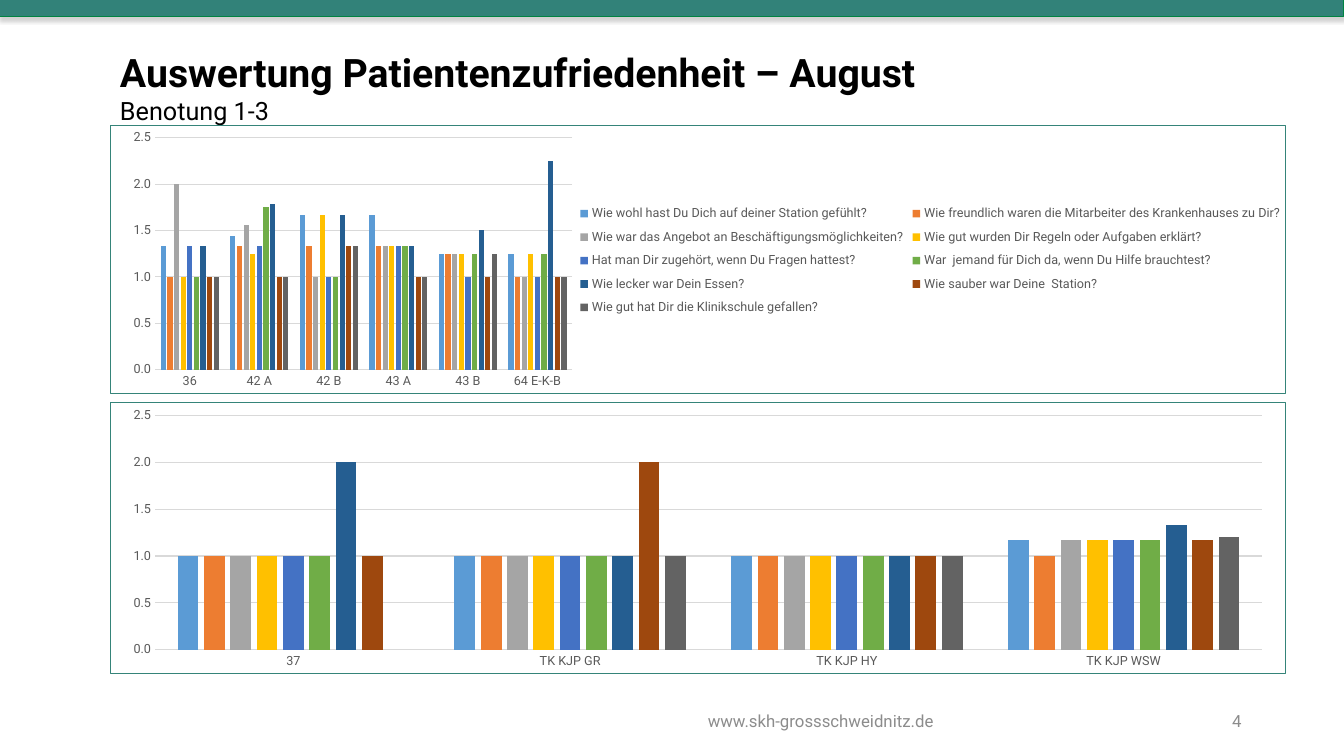
from lxml import etree
from pptx import Presentation
from pptx.chart.data import CategoryChartData
from pptx.dml.color import RGBColor
from pptx.enum.chart import XL_CHART_TYPE, XL_LEGEND_POSITION, XL_TICK_MARK
from pptx.enum.shapes import MSO_SHAPE
from pptx.enum.text import MSO_ANCHOR, MSO_AUTO_SIZE, PP_ALIGN
from pptx.oxml import parse_xml
from pptx.oxml.ns import nsdecls, qn
from pptx.util import Cm, Pt

COLUMNS = XL_CHART_TYPE.COLUMN_CLUSTERED
LEGEND_RIGHT = XL_LEGEND_POSITION.RIGHT
NO_TICK = XL_TICK_MARK.NONE
RECTANGLE = MSO_SHAPE.RECTANGLE
TOP, MIDDLE = MSO_ANCHOR.TOP, MSO_ANCHOR.MIDDLE
FIXED_SIZE = MSO_AUTO_SIZE.NONE
LEFT, CENTER, RIGHT = PP_ALIGN.LEFT, PP_ALIGN.CENTER, PP_ALIGN.RIGHT

FONT = "Roboto"
COLORS = {
    "bar": "328279", "bar_line": "008442", "shadow": "808080",
    "title": "000000", "footer": "8C8C8C", "label": "595959",
    "grid": "D9D9D9", "border": "358479",
}
SERIES_COLORS = ["5B9BD5", "ED7D31", "A5A5A5", "FFC000", "4472C4",
                 "70AD47", "255E91", "9E480E", "636363"]

STATIONS = ["36", "42 A", "42 B", "43 A", "43 B", "64 E-K-B"]
STATION_GRADES = {
    "Wie wohl hast Du Dich auf deiner Station gefühlt?": [1.33, 1.44, 1.67, 1.67, 1.25, 1.25],
    "Wie freundlich waren die Mitarbeiter des Krankenhauses zu Dir?": [1, 1.33, 1.33, 1.33, 1.25, 1],
    "Wie war das Angebot an Beschäftigungsmöglichkeiten?": [2, 1.56, 1, 1.33, 1.25, 1],
    "Wie gut wurden Dir Regeln oder Aufgaben erklärt?": [1, 1.25, 1.67, 1.33, 1.25, 1.25],
    "Hat man Dir zugehört, wenn Du Fragen hattest?": [1.33, 1.33, 1, 1.33, 1, 1],
    "War  jemand für Dich da, wenn Du Hilfe brauchtest?": [1, 1.75, 1, 1.33, 1.25, 1.25],
    "Wie lecker war Dein Essen?": [1.33, 1.78, 1.67, 1.33, 1.5, 2.25],
    "Wie sauber war Deine  Station?": [1, 1, 1.33, 1, 1, 1],
    "Wie gut hat Dir die Klinikschule gefallen?": [1, 1, 1.33, 1, 1.25, 1],
}
CLINICS = ["37", "TK KJP GR", "TK KJP HY", "TK KJP WSW"]
CLINIC_ROWS = [
    [1, 1, 1, 1.17], [1, 1, 1, 1], [1, 1, 1, 1.17],
    [1, 1, 1, 1.17], [1, 1, 1, 1.17], [1, 1, 1, 1.17],
    [2, 1, 1, 1.33], [1, 2, 1, 1.17], [None, 1, 1, 1.2],
]
CLINIC_GRADES = {f"Series {number}": row for number, row in enumerate(CLINIC_ROWS, 1)}


def color(name):
    return RGBColor.from_string(COLORS[name])


def style_font(font, size, name, bold=False):
    font.name = FONT
    font.size = Pt(size)
    font.bold = bold
    font.color.rgb = color(name)


def add_top_bar(page, box):
    bar = page.shapes.add_shape(RECTANGLE, *map(Cm, box))
    bar.fill.solid()
    bar.fill.fore_color.rgb = color("bar")
    bar.line.color.rgb = color("bar_line")
    bar.line.width = Pt(0.75)
    bar.shadow.inherit = False
    effects = bar._element.spPr.find(qn("a:effectLst"))
    effects.append(parse_xml(
        f'<a:outerShdw {nsdecls("a")} blurRad="40000" dist="23000" dir="5400000" rotWithShape="0">'
        f'<a:srgbClr val="{COLORS["shadow"]}"><a:alpha val="35000"/></a:srgbClr></a:outerShdw>'))


def add_title(page, box):
    title = page.shapes.title
    title.left, title.top, title.width, title.height = map(Cm, box)
    frame = title.text_frame
    frame.text = "Auswertung Patientenzufriedenheit – August\nBenotung 1-3"
    frame.word_wrap = True
    frame.auto_size = FIXED_SIZE
    frame.vertical_anchor = TOP
    for para, size, bold in zip(frame.paragraphs, (28, 18), (True, False)):
        para.alignment = LEFT
        style_font(para.font, size, "title", bold)


def add_footer_text(page, box, text, alignment):
    frame = page.shapes.add_textbox(*map(Cm, box)).text_frame
    frame.word_wrap = True
    frame.vertical_anchor = MIDDLE
    para = frame.paragraphs[0]
    para.text = text
    para.alignment = alignment
    style_font(para.font, 12, "footer")


def make_layout(area, inner=False):
    layout = etree.Element(qn("c:layout"))
    manual = etree.SubElement(layout, qn("c:manualLayout"))
    settings = [("layoutTarget", "inner")] if inner else []
    settings += [("xMode", "edge"), ("yMode", "edge")]
    settings += zip("xywh", area)
    for tag, value in settings:
        etree.SubElement(manual, qn(f"c:{tag}")).set("val", str(value))
    return layout


def drop_layout(parent):
    for layout in parent.findall(qn("c:layout")):
        parent.remove(layout)


def style_axes(chart):
    values, categories = chart.value_axis, chart.category_axis
    for axis in (values, categories):
        axis.major_tick_mark = axis.minor_tick_mark = NO_TICK
        style_font(axis.tick_labels.font, 9, "label")
    values.minimum_scale, values.maximum_scale, values.major_unit = 0, 2.5, 0.5
    values.tick_labels.number_format = "0.0"
    values.tick_labels.number_format_is_linked = False
    values.format.line.fill.background()
    for line in (values.major_gridlines.format.line, categories.format.line):
        line.color.rgb = color("grid")
        line.width = Pt(0.75)


def add_border(chart):
    chart._chartSpace.find(qn("c:chart")).addnext(parse_xml(
        f'<c:spPr {nsdecls("c", "a")}><a:noFill/><a:ln w="9525"><a:solidFill>'
        f'<a:srgbClr val="{COLORS["border"]}"/></a:solidFill></a:ln></c:spPr>'))


def add_legend(chart, area):
    chart.has_legend = True
    legend = chart.legend
    legend.position = LEGEND_RIGHT
    legend.include_in_layout = False
    style_font(legend.font, 9, "label")
    element = legend._element
    drop_layout(element)
    element.find(qn("c:legendPos")).addnext(make_layout(area))


def add_grades_chart(page, box, categories, grades, plot_area, legend_area=None):
    data = CategoryChartData(number_format="0.0")
    data.categories = categories
    for name, values in grades.items():
        data.add_series(name, values)
    chart = page.shapes.add_chart(COLUMNS, *map(Cm, box), data).chart
    style_font(chart.font, 10, "title")
    chart.has_title = False
    chart.has_legend = False
    style_axes(chart)
    add_border(chart)
    plot = chart.plots[0]
    plot.vary_by_categories = False
    plot.gap_width, plot.overlap = 219, -27
    for series, shade in zip(plot.series, SERIES_COLORS):
        series.format.fill.solid()
        series.format.fill.fore_color.rgb = RGBColor.from_string(shade)
    plot_element = chart._chartSpace.find(qn("c:chart")).find(qn("c:plotArea"))
    drop_layout(plot_element)
    plot_element.insert(0, make_layout(plot_area, inner=True))
    if legend_area:
        add_legend(chart, legend_area)


def main():
    deck = Presentation()
    deck.slide_width, deck.slide_height = Cm(33.87), Cm(19.05)
    page = deck.slides.add_slide(deck.slide_layouts[5])
    add_top_bar(page, (0, 0, 33.87, 0.42))
    add_footer_text(page, (12.24, 17.65, 16.89, 1.02), "www.skh-grossschweidnitz.de", CENTER)
    add_footer_text(page, (29.86, 17.65, 1.68, 1.02), "4", RIGHT)
    add_grades_chart(page, (2.77, 3.14, 29.64, 6.79), STATIONS, STATION_GRADES,
                     (0.038, 0.047, 0.355, 0.864), (0.395, 0.27, 0.605, 0.47))
    add_title(page, (2.77, 1.09, 21.54, 2.24))
    add_grades_chart(page, (2.77, 10.13, 29.64, 6.85), CLINICS, CLINIC_GRADES,
                     (0.038, 0.048, 0.942, 0.865))
    deck.save("out.pptx")


if __name__ == "__main__":
    main()
